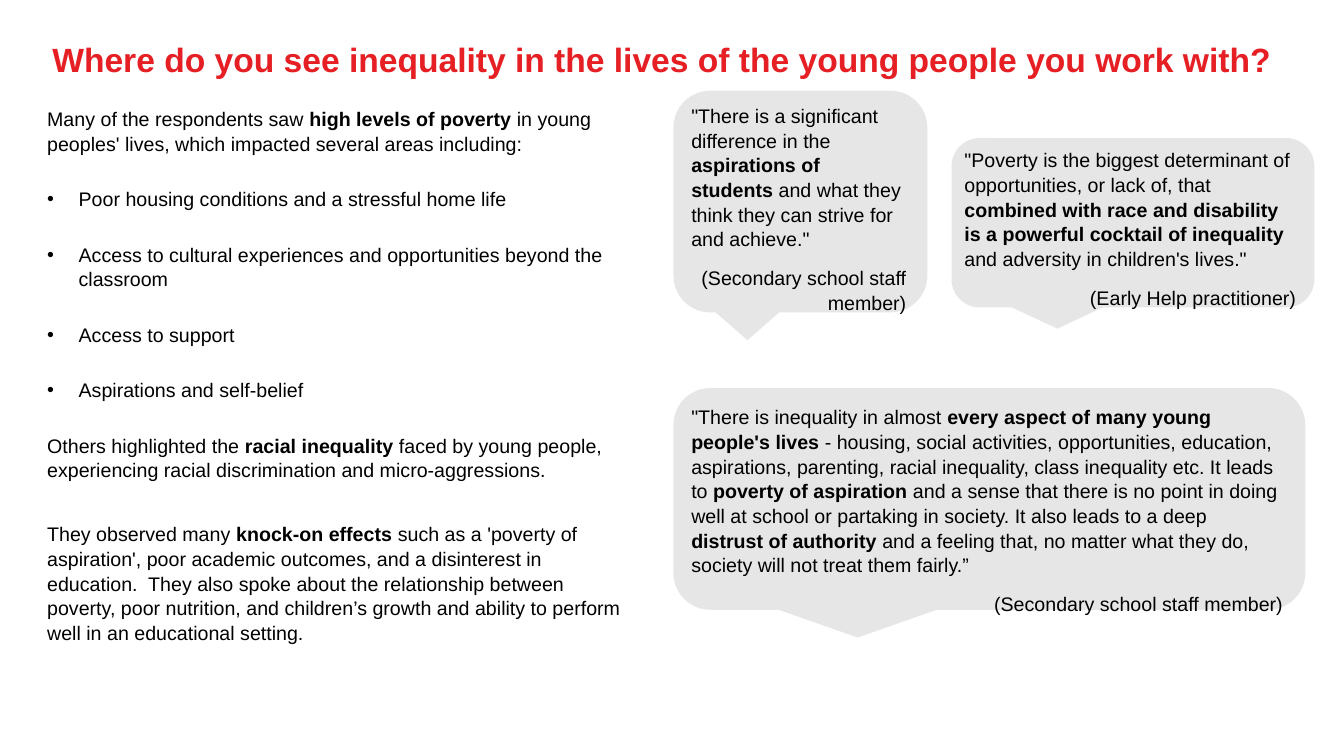
from lxml.etree import SubElement
from pptx import Presentation
from pptx.dml.color import RGBColor
from pptx.enum.shapes import MSO_SHAPE as SHAPE
from pptx.enum.text import MSO_ANCHOR as ANCHOR, MSO_AUTO_SIZE as AUTOSIZE, PP_ALIGN as ALIGN
from pptx.oxml.ns import qn
from pptx.util import Pt

COLORS = {"title": "E51F23", "text": "000000", "bubble": "E7E6E6"}
FONT = "Arial"
BULLET_INDENT = 22.5

TITLE = "Where do you see inequality in the lives of the young people you work with?"

FINDINGS = [
    ("Many of the respondents saw** high levels of poverty **in young peoples' lives, "
     "which impacted several areas including:", False, 12),
    ("Poor housing conditions and a stressful home life", True, 12),
    ("Access to cultural experiences and opportunities beyond the classroom", True, 12),
    ("Access to support", True, 12),
    ("Aspirations and self-belief", True, 12),
    ("Others highlighted the **racial inequality** faced by young people, "
     "experiencing racial discrimination and micro-aggressions.", False, 18),
    ("They observed many **knock-on effects **such as a 'poverty of aspiration', poor "
     "academic outcomes, and a disinterest in education.  They also spoke about the "
     "relationship between poverty, poor nutrition, and children’s growth and ability "
     "to perform well in an educational setting.", False, 18),
]

QUOTES = [
    ((481, 64.8, 181.4, 158.4), (486.7, 69.8, 167.8, 141.1),
     "\"There is a significant difference in the **aspirations of students **and "
     "what they think they can strive for and achieve.\"",
     "(Secondary school staff member)"),
    ((679.7, 98.6, 259.2, 121), (681.8, 101.5, 251.3, 109.4),
     "\"Poverty is the biggest determinant of opportunities, or lack of, that "
     "**combined with race and disability is a powerful cocktail of inequality** "
     "and adversity in children's lives.\"",
     "(Early Help practitioner)"),
    ((481, 277.2, 451.4, 158.4), (486.7, 285.1, 437, 145.4),
     "\"There is inequality in almost **every aspect of many young people's lives** "
     "- housing, social activities, opportunities, education, aspirations, parenting, "
     "racial inequality, class inequality etc. It leads to **poverty of aspiration **"
     "and a sense that there is no point in doing well at school or partaking in "
     "society. It also leads to a deep **distrust of authority **and a feeling that, "
     "no matter what they do, society will not treat them fairly.”",
     "(Secondary school staff member)"),
]


def points(*values):
    """Convert numbers to lengths in points."""
    return [Pt(value) for value in values]


def style_font(font, size, color, bold):
    """Give a font its face, size, colour and weight."""
    font.name = FONT
    font.size = Pt(size)
    font.bold = bold
    font.color.rgb = RGBColor.from_string(COLORS[color])


def add_title(slide):
    """Place and format the title placeholder."""
    title = slide.shapes.title
    title.left, title.top, title.width, title.height = points(30.2, 25.2, 907.9, 37.4)
    frame = title.text_frame
    frame.text = TITLE
    frame.auto_size = AUTOSIZE.NONE
    frame.vertical_anchor = ANCHOR.MIDDLE
    heading = frame.paragraphs[0]
    heading.alignment = ALIGN.LEFT
    heading.line_spacing = 0.9
    style_font(heading.runs[0].font, 24, "title", True)


def add_text_area(slide, box):
    """Add a wrapping text box and return its frame."""
    frame = slide.shapes.add_textbox(*points(*box)).text_frame
    frame.word_wrap = True
    return frame


def add_bullet(paragraph):
    """Give a paragraph a hanging bullet."""
    properties = paragraph._p.get_or_add_pPr()
    properties.set("marL", str(Pt(BULLET_INDENT)))
    properties.set("indent", str(-Pt(BULLET_INDENT)))
    SubElement(properties, qn("a:buFont"), typeface=FONT)
    SubElement(properties, qn("a:buChar"), char="•")


def write_paragraph(frame, marked, first=False, bullet=False, after=0, align=ALIGN.LEFT):
    """Write one paragraph, with bold between double asterisks."""
    paragraph = frame.paragraphs[0] if first else frame.add_paragraph()
    if bullet:
        add_bullet(paragraph)
    paragraph.alignment = align
    paragraph.line_spacing = 1.05
    paragraph.space_before = Pt(0 if first else 10)
    paragraph.space_after = Pt(after)
    for index, part in enumerate(marked.split("**")):
        run = paragraph.add_run()
        run.text = part
        style_font(run.font, 14, "text", index % 2 == 1)


def add_findings(slide):
    """Add the column of findings on the left."""
    frame = add_text_area(slide, (26.6, 72, 435.6, 401))
    for index, (marked, bullet, after) in enumerate(FINDINGS):
        write_paragraph(frame, marked, index == 0, bullet, after)


def add_quote(slide, bubble_box, text_box, quote, speaker):
    """Add a speech bubble with a quote and its speaker."""
    bubble = slide.shapes.add_shape(SHAPE.ROUNDED_RECTANGULAR_CALLOUT, *points(*bubble_box))
    bubble.shadow.inherit = False
    bubble.fill.solid()
    bubble.fill.fore_color.rgb = RGBColor.from_string(COLORS["bubble"])
    bubble.line.fill.background()
    frame = add_text_area(slide, text_box)
    write_paragraph(frame, quote, first=True)
    write_paragraph(frame, speaker, align=ALIGN.RIGHT)


def main():
    """Build the slide and save it."""
    deck = Presentation()
    deck.slide_width, deck.slide_height = points(960, 540)
    slide = deck.slides.add_slide(deck.slide_layouts[5])
    add_title(slide)
    add_findings(slide)
    for quote in QUOTES:
        add_quote(slide, *quote)
    deck.save("out.pptx")


if __name__ == "__main__":
    main()
